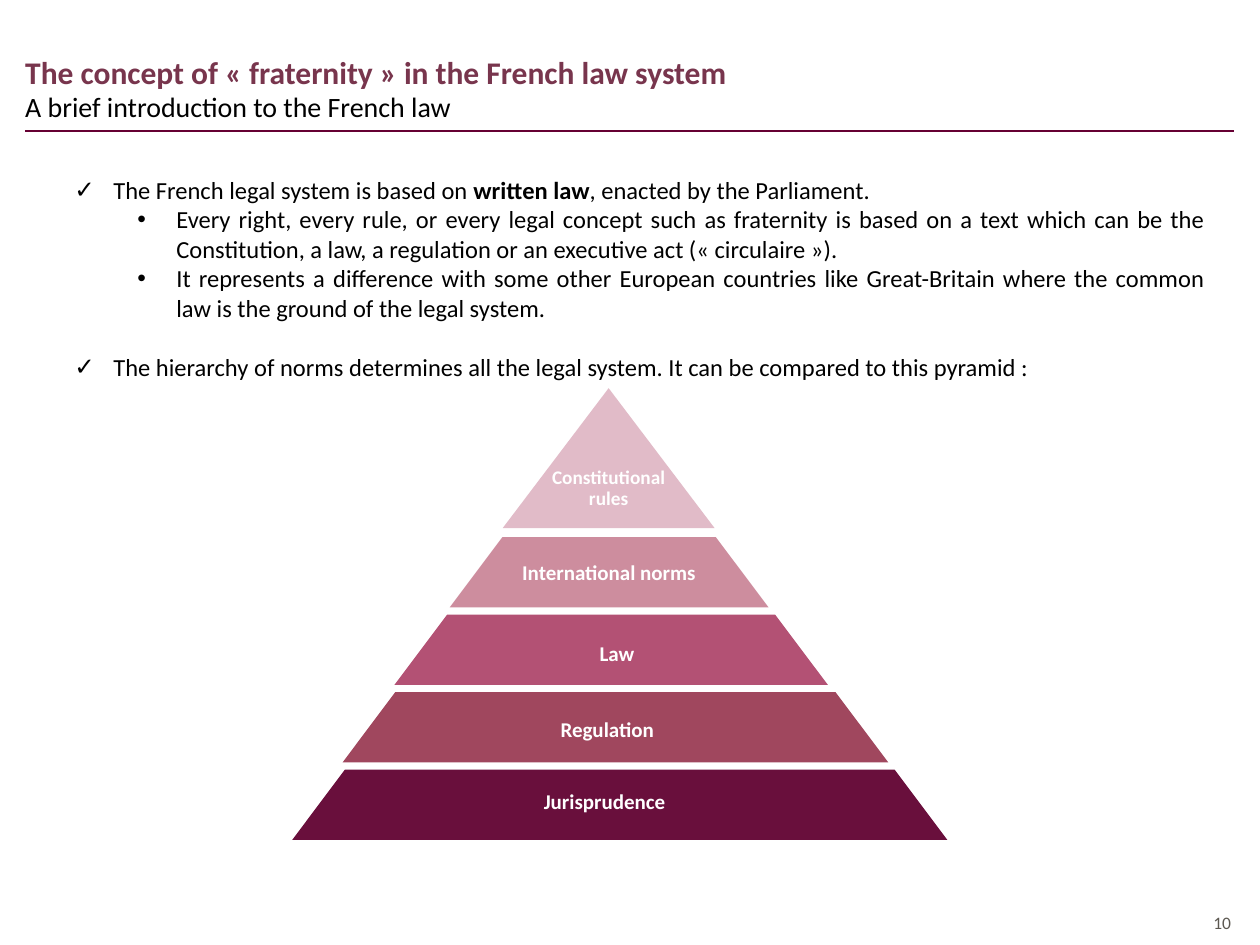
from lxml.etree import SubElement
from pptx import Presentation
from pptx.dml.color import RGBColor
from pptx.enum.shapes import MSO_CONNECTOR as Connector, MSO_SHAPE as Shape
from pptx.enum.text import MSO_ANCHOR as Anchor, PP_ALIGN as Align
from pptx.oxml.ns import qn
from pptx.util import Pt

FONT = "Calibri"
BLACK = RGBColor(0x00, 0x00, 0x00)
WHITE = RGBColor(0xFF, 0xFF, 0xFF)
GREY = RGBColor(0x5C, 0x58, 0x51)
PLUM = RGBColor(0x78, 0x35, 0x4D)
RULE = RGBColor(0x66, 0x00, 0x33)
PEAK = RGBColor(0xE1, 0xBB, 0xC8)
ROSE = RGBColor(0xCD, 0x8D, 0x9E)
PINK = RGBColor(0xB3, 0x51, 0x74)
BRICK = RGBColor(0xA0, 0x47, 0x5E)
WINE = RGBColor(0x69, 0x0F, 0x3C)

TIER_TOP, TIER_PITCH, TIER_HEIGHT = 306.9, 44.3, 40.2
TIERS = [
    ("International norms", ROSE, 257, 182.2, 348, 316),
    ("Law", PINK, 225.4, 247.7, 352.5, 362.2),
    ("Regulation", BRICK, 195.8, 311.8, 347, 406),
    ("Jurisprudence", WINE, 167, 374.4, 345.5, 447.1),
]
LABEL_WIDTH, LABEL_HEIGHT = 126, 21.6

POINTS = [
    ("✓", 50.4, 0, [("The French legal system is based on ", False),
                    ("written law", True),
                    (", enacted by the Parliament.", False)]),
    ("•", 86.4, 0, [("Every right, every rule, or every legal concept such as "
                     "fraternity is based on a text which can be the Constitution, "
                     "a law, a regulation or an executive act («\u00a0circulaire\u00a0»).",
                     False)]),
    ("•", 86.4, 0, [("It represents a difference with some other European countries "
                     "like Great-Britain where the common law is the ground of the "
                     "legal system.", False)]),
    ("✓", 50.4, 17, [("The hierarchy of norms determines all the legal system. "
                      "It can be compared to this pyramid :", False)]),
]


def format_run(r, size, color, bold=False):
    r.font.name = FONT
    r.font.size = Pt(size)
    r.font.color.rgb = color
    r.font.bold = bold


def set_margins(tf, left, top, right, bottom):
    tf.margin_left, tf.margin_top = Pt(left), Pt(top)
    tf.margin_right, tf.margin_bottom = Pt(right), Pt(bottom)


def add_text(slide, box, text, size, color, bold=False, align=Align.LEFT):
    tf = slide.shapes.add_textbox(*map(Pt, box)).text_frame
    tf.word_wrap = True
    set_margins(tf, 0, 3.6, 0, 3.6)
    tf.text = text
    p = tf.paragraphs[0]
    p.alignment = align
    format_run(p.runs[0], size, color, bold)


def add_rule(slide, x1, x2, y):
    line = slide.shapes.add_connector(Connector.STRAIGHT, Pt(x1), Pt(y), Pt(x2), Pt(y))
    line.line.color.rgb = RULE
    line.line.width = Pt(1)
    SubElement(line._element.spPr, qn("a:effectLst"))


def set_bullet(p, char, indent):
    pPr = p._p.get_or_add_pPr()
    pPr.set("marL", str(Pt(indent)))
    pPr.set("indent", str(Pt(-22.3)))
    SubElement(pPr, qn("a:buFont")).set("typeface", "Arial")
    SubElement(pPr, qn("a:buChar")).set("char", char)


def add_points(slide, box):
    tf = slide.shapes.add_textbox(*map(Pt, box)).text_frame
    tf.word_wrap = True
    set_margins(tf, 0, 0, 0, 0)
    for i, (char, indent, gap, parts) in enumerate(POINTS):
        p = tf.add_paragraph() if i else tf.paragraphs[0]
        p.alignment = Align.JUSTIFY
        p.space_before = Pt(gap)
        set_bullet(p, char, indent)
        for text, bold in parts:
            r = p.add_run()
            r.text = text
            format_run(r, 14, BLACK, bold)


def add_block(slide, kind, box, color):
    sp = slide.shapes.add_shape(kind, *map(Pt, box))
    sp.shadow.inherit = False
    sp.fill.solid()
    sp.fill.fore_color.rgb = color
    sp.line.fill.background()
    return sp


def add_peak(slide):
    sp = add_block(slide, Shape.ISOSCELES_TRIANGLE, (287.3, 221.8, 121, 79.9), PEAK)
    tf = sp.text_frame
    tf.word_wrap = False
    tf.vertical_anchor = Anchor.MIDDLE
    set_margins(tf, 0, 0, 0, 5)
    tf.text = "Constitutional\nrules"
    for p in tf.paragraphs:
        p.alignment = Align.CENTER
        p.line_spacing = 0.9
        format_run(p.runs[0], 11, WHITE, True)


def add_tiers(slide):
    for i, (name, color, left, width, center, label_top) in enumerate(TIERS):
        top = TIER_TOP + i * TIER_PITCH
        sp = add_block(slide, Shape.TRAPEZOID, (left, top, width, TIER_HEIGHT), color)
        sp.adjustments[0] = 0.75
        label = (center - LABEL_WIDTH / 2, label_top, LABEL_WIDTH, LABEL_HEIGHT)
        add_text(slide, label, name, 12, WHITE, True, Align.CENTER)


def main():
    prs = Presentation()
    prs.slide_width, prs.slide_height = Pt(720), Pt(540)
    slide = prs.slides.add_slide(prs.slide_layouts[6])
    add_rule(slide, 14.4, 705, 75)
    add_text(slide, (459.4, 517.7, 244, 19.4), "10", 10, GREY, align=Align.RIGHT)
    add_text(slide, (14.4, 47.5, 691, 26), "A brief introduction to the French law",
             16, BLACK)
    add_text(slide, (14.4, 26.6, 691, 23),
             "The concept of «\u00a0fraternity\u00a0» in the French law system",
             18, PLUM, True)
    add_points(slide, (14.4, 100, 674.6, 363))
    add_peak(slide)
    add_tiers(slide)
    prs.save("out.pptx")


if __name__ == "__main__":
    main()
